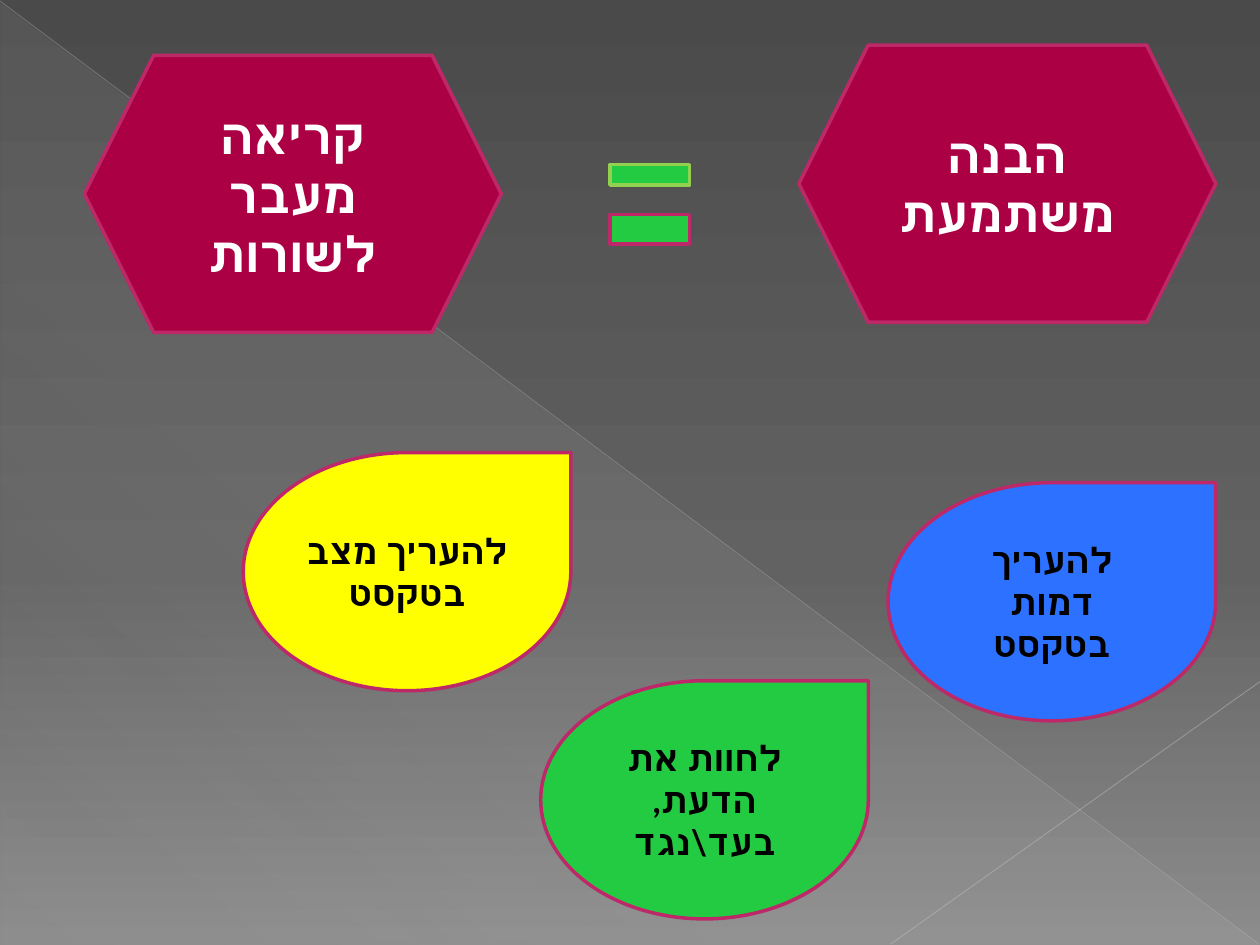
from lxml.etree import SubElement
from pptx import Presentation
from pptx.dml.color import RGBColor
from pptx.enum.shapes import MSO_CONNECTOR as Connector, MSO_SHAPE as Shape
from pptx.enum.text import MSO_ANCHOR as Anchor, PP_ALIGN as Align
from pptx.oxml.ns import qn
from pptx.util import Pt

WHITE = RGBColor(0xFF, 0xFF, 0xFF)
BLACK = RGBColor(0x00, 0x00, 0x00)
CRIMSON = RGBColor(0xAB, 0x00, 0x43)
PINK = RGBColor(0xBD, 0x29, 0x68)
GREEN = RGBColor(0x23, 0xCB, 0x43)
LIME = RGBColor(0x92, 0xD0, 0x50)
BLUE = RGBColor(0x2C, 0x71, 0xFF)
YELLOW = RGBColor(0xFF, 0xFF, 0x00)
DARK_GREY = RGBColor(0x4A, 0x4A, 0x4A)
MID_GREY = RGBColor(0x62, 0x62, 0x62)
LIGHT_GREY = RGBColor(0x8C, 0x8C, 0x8C)
SHEEN = RGBColor(0xD2, 0xD2, 0xD2)
LONG_RAY = RGBColor(0xBF, 0xBF, 0xBF)
SHORT_RAY = RGBColor(0xC6, 0xC6, 0xC6)

FONT = "Lato"
WIDTH, HEIGHT = 720, 540
HEXAGON_SIZE = (238.3, 158.4)
DROP_SIZE = (187.2, 136.1)


def set_opacity(color_element, percent):
    SubElement(color_element, qn("a:alpha")).set("val", str(percent * 1000))


def set_gradient(holder, stops, angle):
    solid = holder.find(qn("a:solidFill"))
    gradient = SubElement(holder, qn("a:gradFill"), rotWithShape="1")
    holder.replace(solid, gradient)
    stop_list = SubElement(gradient, qn("a:gsLst"))
    for position, color, opacity in stops:
        stop = SubElement(stop_list, qn("a:gs"), pos=str(position * 1000))
        color_element = SubElement(stop, qn("a:srgbClr"), val=str(color))
        if opacity < 100:
            set_opacity(color_element, opacity)
    SubElement(gradient, qn("a:lin"), ang=str(angle * 60000), scaled="0")


def add_figure(page, kind, box, fill, outline=None):
    figure = page.shapes.add_shape(kind, *map(Pt, box))
    figure.shadow.inherit = False
    figure.fill.solid()
    figure.fill.fore_color.rgb = fill
    if outline is None:
        figure.line.fill.background()
    else:
        figure.line.color.rgb = outline
        figure.line.width = Pt(2)
    return figure


def add_label(figure, text, size, color):
    frame = figure.text_frame
    frame.word_wrap = True
    frame.vertical_anchor = Anchor.MIDDLE
    para = frame.paragraphs[0]
    para.alignment = Align.CENTER
    para._p.get_or_add_pPr().set("rtl", "1")
    span = para.add_run()
    span.text = text
    span.font.color.rgb = color
    for name, value in {"name": FONT, "size": Pt(size), "bold": True}.items():
        setattr(span.font, name, value)
    SubElement(span._r.get_or_add_rPr(), qn("a:cs"), typeface=FONT)


def add_ray(page, ends, color, width, opacity):
    ray = page.shapes.add_connector(Connector.STRAIGHT, *map(Pt, ends))
    ray.line.color.rgb = color
    ray.line.width = Pt(width)
    properties = ray._element.spPr
    set_opacity(properties.find(".//" + qn("a:srgbClr")), opacity)
    SubElement(properties, qn("a:effectLst"))


def add_backdrop(page, box):
    left, top, width, height = box
    right, bottom = left + width, top + height
    page.background.fill.solid()
    set_gradient(
        page.element.find(".//" + qn("p:bgPr")),
        [(0, DARK_GREY, 100), (60, MID_GREY, 100), (100, LIGHT_GREY, 100)],
        90,
    )
    triangle = add_figure(page, Shape.RIGHT_TRIANGLE, (left + 0.5, top + 1, width - 0.5, height - 1), SHEEN)
    set_gradient(triangle._element.spPr, [(0, SHEEN, 10), (70, SHEEN, 8), (100, SHEEN, 1)], 133)
    add_ray(page, (left, top + 0.5, right - 0.5, bottom - 0.5), LONG_RAY, 0.39, 35)
    add_ray(page, (right, top + 389.5, left + 509, bottom - 0.5), SHORT_RAY, 0.47, 45)


def add_hexagon(page, box, text):
    add_label(add_figure(page, Shape.HEXAGON, box, CRIMSON, PINK), text, 28, WHITE)


def add_drop(page, box, text, fill):
    add_label(add_figure(page, Shape.TEAR, box, fill, PINK), text, 20, BLACK)


def add_equals_sign(page, box):
    left, top, width, height = box
    upper, lower = 11.8, 17
    add_figure(page, Shape.RECTANGLE, (left, top, width, upper), GREEN, LIME)
    add_figure(page, Shape.RECTANGLE, (left, top + height - lower, width, lower), GREEN, PINK)


def main():
    deck = Presentation()
    deck.slide_width, deck.slide_height = Pt(WIDTH), Pt(HEIGHT)
    page = deck.slides.add_slide(deck.slide_layouts[6])
    add_backdrop(page, (0, 0, WIDTH, HEIGHT))
    for corner, text in [
        ((456.5, 25.8), "הבנה משתמעת"),
        ((48.2, 31.6), "קריאה מעבר לשורות"),
    ]:
        add_hexagon(page, corner + HEXAGON_SIZE, text)
    add_equals_sign(page, (348.6, 94, 45.4, 45.6))
    for corner, text, fill in [
        ((507.5, 275.8), "להעריך דמות בטקסט", BLUE),
        ((309, 389), "לחוות את הדעת, בעד\\נגד", GREEN),
        ((139, 258.6), "להעריך מצב בטקסט", YELLOW),
    ]:
        add_drop(page, corner + DROP_SIZE, text, fill)
    deck.save("out.pptx")


if __name__ == "__main__":
    main()
